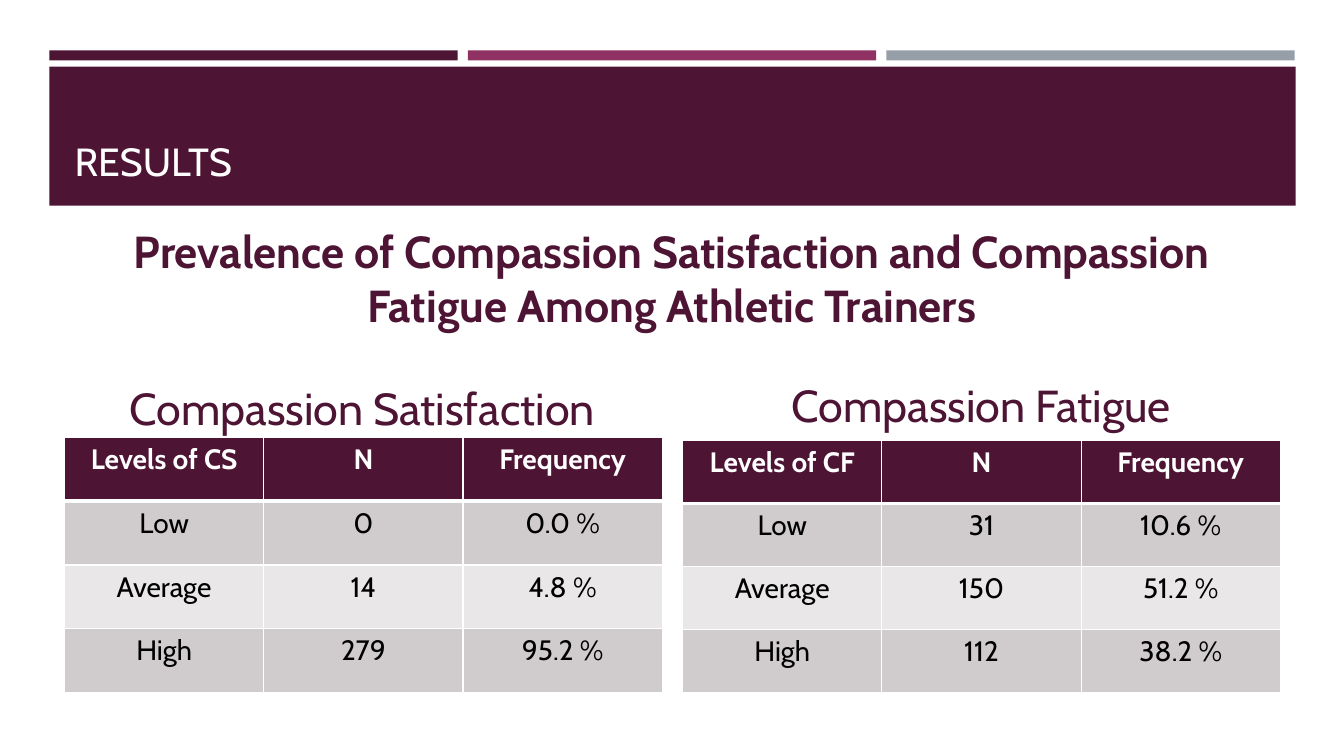
"""Build the results slide on compassion satisfaction and fatigue."""
import dataclasses
import lxml.etree
import pptx
import pptx.dml.color
import pptx.enum.shapes
import pptx.enum.text
import pptx.oxml.ns
import pptx.util

CENTER = pptx.enum.text.PP_ALIGN.CENTER


@dataclasses.dataclass(frozen=True)
class Theme:
    font: str = "Cabin"
    plum: str = "4D1434"
    rose: str = "903163"
    steel: str = "969FA7"
    white: str = "FFFFFF"
    black: str = "000000"
    dark: str = "D0CCCE"
    light: str = "E9E7E8"
    title: int = 28
    head: int = 32
    cell: int = 20
    thin: int = 1
    thick: int = 3


class Deck:
    SCALE = 9144

    def __init__(self, theme):
        self.theme = theme
        self.prs = pptx.Presentation()
        self.prs.slide_width, self.prs.slide_height = self.emu(1333, 750)
        self.slide = self.prs.slides.add_slide(self.prs.slide_layouts[5])

    def emu(self, *sizes):
        return [pptx.util.Emu(size * self.SCALE) for size in sizes]

    def color(self, code):
        return pptx.dml.color.RGBColor.from_string(code)

    def style(self, para, size, color, bold=False, align=CENTER):
        para.alignment = align
        para.font.name = self.theme.font
        para.font.size = pptx.util.Pt(size)
        para.font.bold = bold
        para.font.color.rgb = self.color(color)

    def bar(self, box, color):
        kind = pptx.enum.shapes.MSO_SHAPE.RECTANGLE
        shape = self.slide.shapes.add_shape(kind, *self.emu(*box))
        shape.shadow.inherit = False
        shape.fill.solid()
        shape.fill.fore_color.rgb = self.color(color)
        shape.line.fill.background()

    def title(self, box, text):
        title = self.slide.shapes.title
        title.left, title.top, title.width, title.height = self.emu(*box)
        title.element.getparent().append(title.element)
        frame = title.text_frame
        frame.text = text
        frame.vertical_anchor = pptx.enum.text.MSO_ANCHOR.BOTTOM
        self.style(frame.paragraphs[0], self.theme.title, self.theme.white,
                   align=pptx.enum.text.PP_ALIGN.LEFT)

    def text(self, box, text, bold=False):
        frame = self.slide.shapes.add_textbox(*self.emu(*box)).text_frame
        frame.word_wrap = True
        frame.text = text
        self.style(frame.paragraphs[0], self.theme.head, self.theme.plum, bold)

    def edge(self, cell, side, width):
        qn = pptx.oxml.ns.qn
        props = cell._tc.get_or_add_tcPr()
        line = lxml.etree.SubElement(props, qn(f"a:ln{side}"),
                                     w=str(pptx.util.Pt(width)))
        fill = lxml.etree.SubElement(line, qn("a:solidFill"))
        lxml.etree.SubElement(fill, qn("a:srgbClr"), val=self.theme.white)

    def table(self, box, rows):
        look = self.theme
        frame = self.slide.shapes.add_table(len(rows), len(rows[0]), *self.emu(*box))
        for r, row in enumerate(rows):
            head = r == 0
            back = look.plum if head else look.dark if r % 2 else look.light
            for c, text in enumerate(row):
                cell = frame.table.cell(r, c)
                for side in "LRTB":
                    thick = (side, r) in (("B", 0), ("T", 1))
                    self.edge(cell, side, look.thick if thick else look.thin)
                cell.fill.solid()
                cell.fill.fore_color.rgb = self.color(back)
                cell.text = text
                self.style(cell.text_frame.paragraphs[0], look.cell,
                           look.white if head else look.black, head)


def main():
    theme = Theme()
    deck = Deck(theme)
    for i, color in enumerate((theme.plum, theme.rose, theme.steel)):
        deck.bar((49 + 415 * i, 50, 405, 10), color)
    deck.bar((49, 66, 1236, 138), theme.plum)
    deck.title((64, 80, 1206, 108), "RESULTS")
    deck.table((677, 437, 593, 250), [
        ("Levels of CF", "N", "Frequency"),
        ("Low", "31", "10.6 %"),
        ("Average", "150", "51.2 %"),
        ("High", "112", "38.2 %"),
    ])
    deck.table((64, 434, 593, 253), [
        ("Levels of CS", "N", "Frequency"),
        ("Low", "0", "0.0 %"),
        ("Average", "14", "4.8 %"),
        ("High", "279", "95.2 %"),
    ])
    deck.text((85, 373, 549, 64), "Compassion Satisfaction")
    deck.text((699, 370, 549, 64), "Compassion Fatigue")
    deck.text((95, 217, 1143, 118), "Prevalence of Compassion Satisfaction and "
              "Compassion Fatigue Among Athletic Trainers", bold=True)
    deck.prs.save("out.pptx")


if __name__ == "__main__":
    main()
